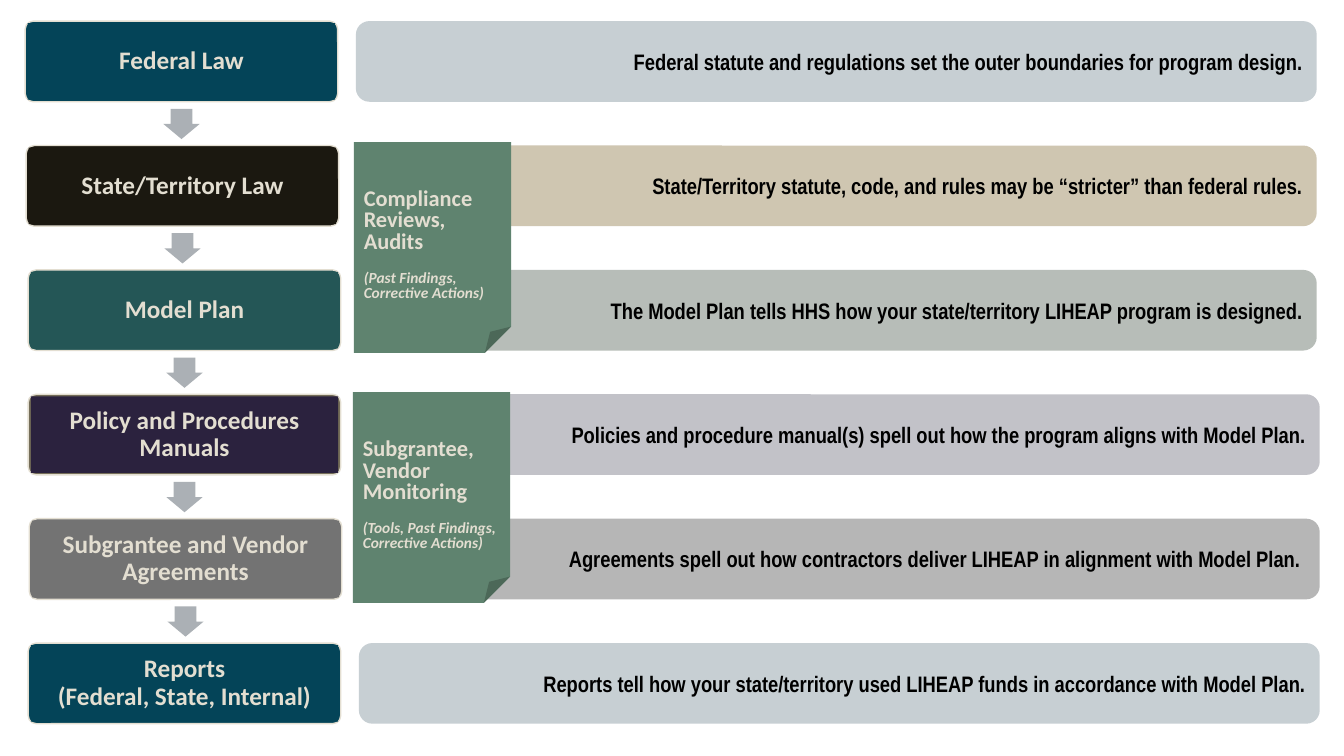
from pptx import Presentation
from pptx.dml.color import RGBColor
from pptx.enum.shapes import MSO_SHAPE
from pptx.enum.text import MSO_ANCHOR, PP_ALIGN
from pptx.util import Inches, Pt

CREAM, BLACK, ARROW_GREY, NOTE_GREEN = "E3DED1", "000000", "ABB0B5", "5F836F"
FIRST_TOP, ROW_PITCH, ROW_HEIGHT = 0.21, 1.234, 0.8
CARD_WIDTH, BAR_WIDTH = 3.1, 9.53
FIRST_BARS_LEFT, LAST_BARS_LEFT = 3.53, 3.56

# card left, card fill, label fill, label lines, bar fill, bar text
LEVELS = [
    (0.25, "044458", "044458", ["Federal Law"], "C7CFD3",
     "Federal statute and regulations set the outer boundaries for program design."),
    (0.26, "1B1810", "1B1810", ["State/Territory Law"], "CFC6B1",
     "State/Territory statute, code, and rules may be “stricter” than federal rules."),
    (0.28, "245656", "245656", ["Model Plan"], "B7BDB8",
     "The Model Plan tells HHS how your state/territory LIHEAP program is designed."),
    (0.28, "746D58", "2B223E", ["Policy and Procedures Manuals"], "C2C2C8",
     "Policies and procedure manual(s) spell out how the program aligns with Model Plan."),
    (0.29, "737373", "737373", ["Subgrantee and Vendor Agreements"], "B6B6B6",
     "Agreements spell out how contractors deliver LIHEAP in alignment with Model Plan. "),
    (0.28, "044458", "044458", ["Reports", "(Federal, State, Internal)"], "C7CFD3",
     "Reports tell how your state/territory used LIHEAP funds in accordance with Model Plan."),
]

# left, top, heading, detail
NOTES = [
    (3.5, 3.89, "Subgrantee, Vendor Monitoring", "(Tools, Past Findings, Corrective Actions)"),
    (3.51, 1.41, "Compliance Reviews, Audits", "(Past Findings, Corrective Actions)"),
]


def color(hex_value):
    return RGBColor.from_string(hex_value)


def add_block(shapes, kind, box, fill, line=None, adjustments=()):
    shape = shapes.add_shape(kind, *map(Inches, box))
    shape.shadow.inherit = False
    shape.fill.solid()
    shape.fill.fore_color.rgb = color(fill)
    if line:
        shape.line.color.rgb = color(line)
        shape.line.width = Pt(1)
    else:
        shape.line.fill.background()
    for index, value in enumerate(adjustments):
        shape.adjustments[index] = value
    return shape


def set_insets(shape, left, top, right, bottom):
    frame = shape.text_frame
    frame.word_wrap = True
    frame.vertical_anchor = MSO_ANCHOR.MIDDLE
    frame.margin_left, frame.margin_top = Inches(left), Inches(top)
    frame.margin_right, frame.margin_bottom = Inches(right), Inches(bottom)


def write_lines(shape, lines, font_name, size, text_color, alignment, spacing=None):
    frame = shape.text_frame
    frame.text = "\n".join(lines)
    for paragraph in frame.paragraphs:
        paragraph.alignment = alignment
        paragraph.line_spacing = spacing
        paragraph.font.name = font_name
        paragraph.font.size = Pt(size)
        paragraph.font.bold = True
        paragraph.font.color.rgb = color(text_color)


def add_card(slide, box, fill, label_fill, lines):
    left, top, width, height = box
    group = slide.shapes.add_group_shape()
    add_block(group.shapes, MSO_SHAPE.ROUNDED_RECTANGLE, box, fill, CREAM, [0.1])
    label_box = (left + 0.025, top + 0.02, width - 0.05, height - 0.04)
    label = add_block(group.shapes, MSO_SHAPE.RECTANGLE, label_box, label_fill)
    set_insets(label, 0.07, 0.07, 0.07, 0.07)
    write_lines(label, lines, "Calibri", 18, CREAM, PP_ALIGN.CENTER, 0.9)


def add_bar(slide, box, fill, text):
    bar = add_block(slide.shapes, MSO_SHAPE.ROUNDED_RECTANGLE, box, fill)
    set_insets(bar, 0.8, 0.05, 0.1, 0.05)
    write_lines(bar, [text], "Arial Narrow", 16, BLACK, PP_ALIGN.RIGHT)


def add_step_arrow(slide, card_box):
    left, top, _, height = card_box
    box = (left + 1.4, top + height + 0.04, 0.3, 0.36)
    arrow = add_block(slide.shapes, MSO_SHAPE.RIGHT_ARROW, box, ARROW_GREY,
                      adjustments=[0.6, 0.5])
    arrow.rotation = 90


def add_note(slide, box, heading, detail):
    note = add_block(slide.shapes, MSO_SHAPE.FOLDED_CORNER, box, NOTE_GREEN)
    set_insets(note, 0.1, 0.27, 0.1, 0.05)
    write_lines(note, [heading, detail], "Calibri", 16, CREAM, PP_ALIGN.LEFT, 0.8)
    detail_paragraph = note.text_frame.paragraphs[1]
    detail_paragraph.space_before = Pt(13)
    detail_paragraph.font.size = Pt(11)
    detail_paragraph.font.italic = True


def add_levels(slide):
    for row, (left, fill, label_fill, lines, bar_fill, text) in enumerate(LEVELS):
        top = FIRST_TOP + row * ROW_PITCH
        card_box = (left, top, CARD_WIDTH, ROW_HEIGHT)
        bar_left = FIRST_BARS_LEFT if row < 3 else LAST_BARS_LEFT
        add_bar(slide, (bar_left, top, BAR_WIDTH, ROW_HEIGHT), bar_fill, text)
        add_card(slide, card_box, fill, label_fill, lines)
        if row < len(LEVELS) - 1:
            add_step_arrow(slide, card_box)


def main():
    presentation = Presentation()
    presentation.slide_width, presentation.slide_height = Inches(13.33), Inches(7.5)
    slide = presentation.slides.add_slide(presentation.slide_layouts[6])
    add_levels(slide)
    for left, top, heading, detail in NOTES:
        add_note(slide, (left, top, 1.56, 2.09), heading, detail)
    presentation.save("out.pptx")


if __name__ == "__main__":
    main()
